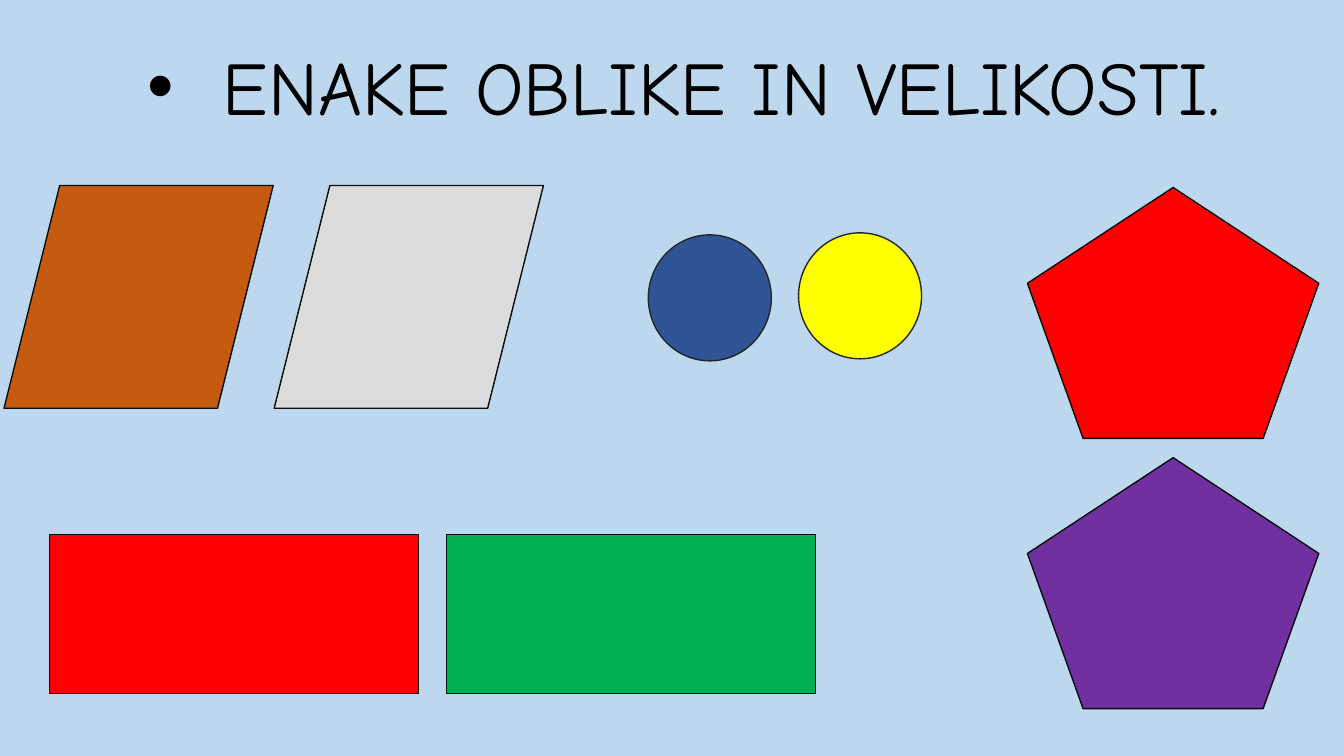
from lxml import etree
from pptx import Presentation
from pptx.dml.color import RGBColor
from pptx.enum.shapes import MSO_SHAPE
from pptx.enum.text import MSO_ANCHOR, MSO_AUTO_SIZE, PP_ALIGN
from pptx.oxml.ns import qn
from pptx.util import Inches, Pt

RECTANGLE = MSO_SHAPE.RECTANGLE
PENTAGON = MSO_SHAPE.REGULAR_PENTAGON
PARALLELOGRAM = MSO_SHAPE.PARALLELOGRAM
CIRCLE = MSO_SHAPE.OVAL
CENTER = PP_ALIGN.CENTER
TOP = MSO_ANCHOR.TOP
FIT_SHAPE = MSO_AUTO_SIZE.SHAPE_TO_FIT_TEXT
TITLE_ONLY = 5

# Each pair of equal shapes: kind, size, outline, then (left, top, fill) of both
SHAPE_PAIRS = [
    (RECTANGLE, (3.66, 1.58), "0D0D0D", [(0.49, 5.3, "FF0000"), (4.43, 5.3, "00B050")]),
    (PENTAGON, (2.89, 2.49), "0D0D0D", [(10.19, 1.86, "FF0000"), (10.19, 4.54, "7030A0")]),
    (PARALLELOGRAM, (2.67, 2.21), "0D0D0D", [(0.04, 1.84, "C55A11"), (2.72, 1.84, "DBDBDB")]),
    (CIRCLE, (1.22, 1.25), "262626", [(6.43, 2.33, "2F5597"), (7.92, 2.31, "FFFF00")]),
]


def paint(color_format, color):
    color_format.rgb = RGBColor.from_string(color)


def write_text(paragraph, text, *, font, size, color, align):
    paragraph.alignment = align
    run = paragraph.add_run()
    run.text = text
    run.font.name = font
    run.font.size = Pt(size)
    paint(run.font.color, color)


def add_bullet(paragraph, indent):
    """Give the paragraph a round bullet with a hanging indent in inches."""
    properties = paragraph._p.get_or_add_pPr()
    properties.set("marL", str(Inches(indent)))
    properties.set("indent", str(Inches(-indent)))
    etree.SubElement(properties, qn("a:buFont"), typeface="Arial")
    etree.SubElement(properties, qn("a:buChar"), char="•")


class SlideBuilder:
    font = "Comic Neue"
    text_color = "000000"
    line_width = 1

    def __init__(self, presentation, background):
        self.slide = presentation.slides.add_slide(presentation.slide_layouts[TITLE_ONLY])
        fill = self.slide.background.fill
        fill.solid()
        paint(fill.fore_color, background)

    def title(self, text, left, top, width, height, size):
        title = self.slide.shapes.title
        title.left, title.top = Inches(left), Inches(top)
        title.width, title.height = Inches(width), Inches(height)
        frame = title.text_frame
        frame.word_wrap = False
        frame.auto_size = FIT_SHAPE
        frame.vertical_anchor = TOP
        paragraph = frame.paragraphs[0]
        write_text(paragraph, text, font=self.font, size=size,
                   color=self.text_color, align=CENTER)
        add_bullet(paragraph, 0.75)

    def shape(self, kind, left, top, width, height, fill, line):
        shape = self.slide.shapes.add_shape(
            kind, Inches(left), Inches(top), Inches(width), Inches(height))
        shape.shadow.inherit = False
        shape.fill.solid()
        paint(shape.fill.fore_color, fill)
        paint(shape.line.color, line)
        shape.line.width = Pt(self.line_width)


def main():
    presentation = Presentation()
    presentation.slide_width = Inches(13.33)
    presentation.slide_height = Inches(7.5)
    builder = SlideBuilder(presentation, background="BDD7EE")
    builder.title("ENAKE OBLIKE IN VELIKOSTI.", 0.49, 0.35, 12.58, 1.01, size=54)
    for kind, (width, height), line, members in SHAPE_PAIRS:
        for left, top, fill in members:
            builder.shape(kind, left, top, width, height, fill, line)
    presentation.save("out.pptx")


if __name__ == "__main__":
    main()
